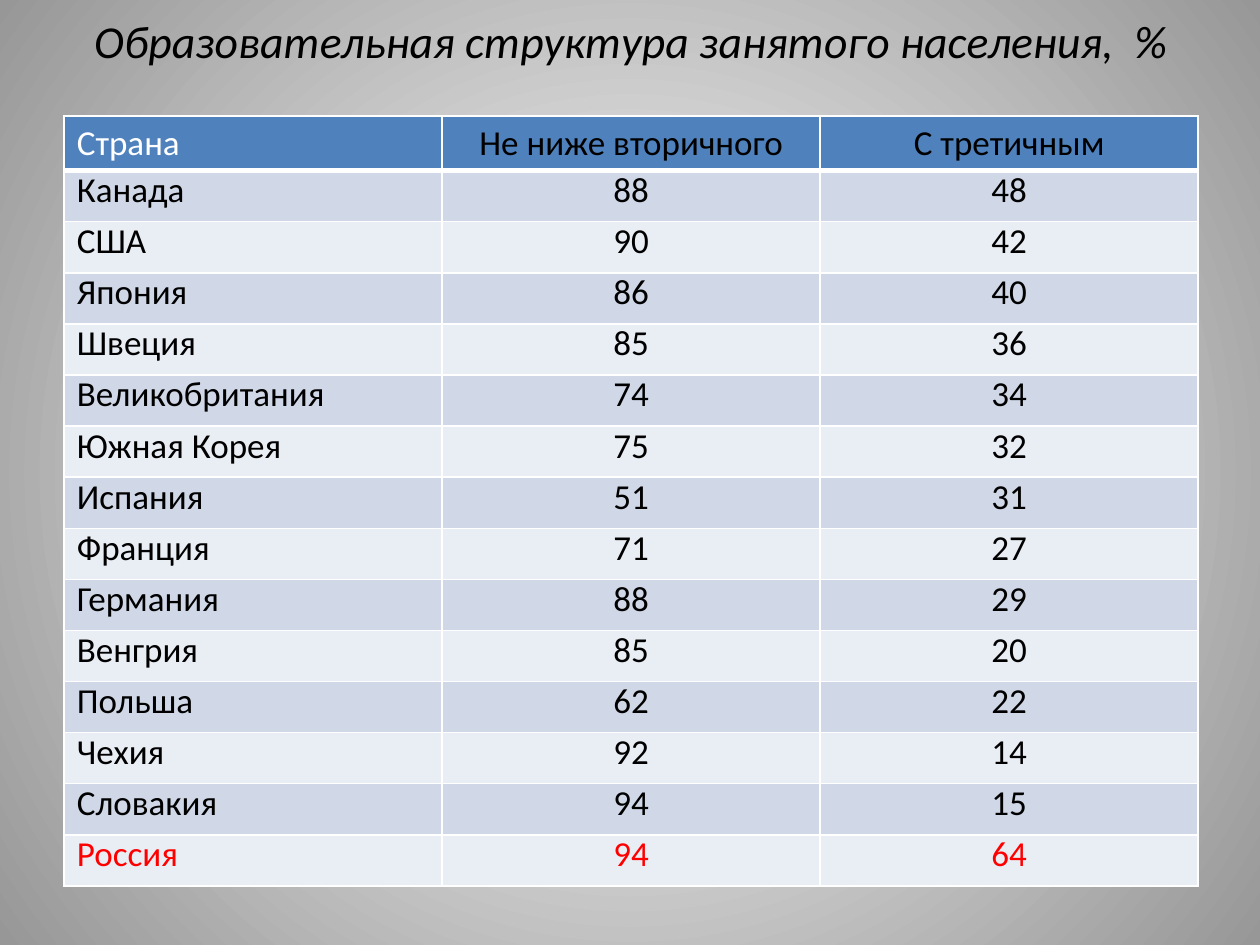
from lxml.etree import SubElement
from pptx import Presentation
from pptx.dml.color import RGBColor
from pptx.enum.text import MSO_ANCHOR, PP_ALIGN
from pptx.oxml.ns import qn
from pptx.util import Inches, Pt

COLORS = {
    "white": "FFFFFF",
    "edge": "979797",
    "header": "4F81BD",
    "band_dark": "D0D8E8",
    "band_light": "E9EDF4",
    "text": "000000",
    "accent": "FF0000",
}

ROWS = [
    ("Страна", "Не ниже вторичного", "С третичным"),
    ("Канада", 88, 48),
    ("США", 90, 42),
    ("Япония", 86, 40),
    ("Швеция", 85, 36),
    ("Великобритания", 74, 34),
    ("Южная Корея", 75, 32),
    ("Испания", 51, 31),
    ("Франция", 71, 27),
    ("Германия", 88, 29),
    ("Венгрия", 85, 20),
    ("Польша", 62, 22),
    ("Чехия", 92, 14),
    ("Словакия", 94, 15),
    ("Россия", 94, 64),
]


def write_text(frame, text, size=20, color="text", italic=False,
               align=PP_ALIGN.CENTER, spacing=None):
    paragraph = frame.paragraphs[0]
    paragraph.alignment = align
    paragraph.line_spacing = spacing
    run = paragraph.add_run()
    run.text = text
    run.font.name = "Calibri"
    run.font.size = Pt(size)
    run.font.italic = italic
    run.font.color.rgb = RGBColor.from_string(COLORS[color])


def set_borders(cell, widths):
    properties = cell._tc.get_or_add_tcPr()
    for index, (side, width) in enumerate(widths.items()):
        line = properties.makeelement(qn(f"a:{side}"), {"w": str(Pt(width))})
        fill = SubElement(line, qn("a:solidFill"))
        SubElement(fill, qn("a:srgbClr"), val=COLORS["white"])
        properties.insert(index, line)


prs = Presentation()
prs.slide_width = Inches(10)
prs.slide_height = Inches(7.5)
slide = prs.slides.add_slide(prs.slide_layouts[6])

backdrop = slide.background.fill
backdrop.gradient()
for stop, position, color in zip(backdrop.gradient_stops, (0, 1), ("white", "edge")):
    stop.position = position
    stop.color.rgb = RGBColor.from_string(COLORS[color])
gradient = slide._element.find(".//" + qn("a:gradFill"))
gradient.remove(gradient.find(qn("a:lin")))
radial = SubElement(gradient, qn("a:path"), path="circle")
SubElement(radial, qn("a:fillToRect"), l="50000", t="50000", r="50000", b="50000")

title = slide.shapes.add_textbox(Inches(0.51), Inches(0), Inches(9), Inches(1.25)).text_frame
title.word_wrap = True
title.vertical_anchor = MSO_ANCHOR.TOP
title.margin_top = Inches(0.1)
write_text(title, "Образовательная структура занятого населения,  %", size=26.1, italic=True)

table_height = Inches(6.11)
header_height = Inches(0.43)
table = slide.shapes.add_table(
    len(ROWS), 3, Inches(0.51), Inches(0.92), Inches(9), table_height).table
for column in table.columns:
    column.width = Inches(3)

last = len(ROWS) - 1
for r, values in enumerate(ROWS):
    is_header = r == 0
    table.rows[r].height = header_height if is_header else (table_height - header_height) // last
    band = "header" if is_header else "band_dark" if r % 2 else "band_light"
    for c, value in enumerate(values):
        cell = table.cell(r, c)
        cell.fill.solid()
        cell.fill.fore_color.rgb = RGBColor.from_string(COLORS[band])
        set_borders(cell, {"lnL": 1, "lnR": 1, "lnT": 3 if r == 1 else 1,
                           "lnB": 3 if is_header else 1})
        if c:
            align = PP_ALIGN.CENTER
        else:
            align = PP_ALIGN.LEFT if is_header else PP_ALIGN.JUSTIFY
        color = "accent" if r == last else "white" if is_header and c == 0 else "text"
        write_text(cell.text_frame, str(value), color=color, align=align,
                   spacing=None if is_header else 0.75)

prs.save("out.pptx")
